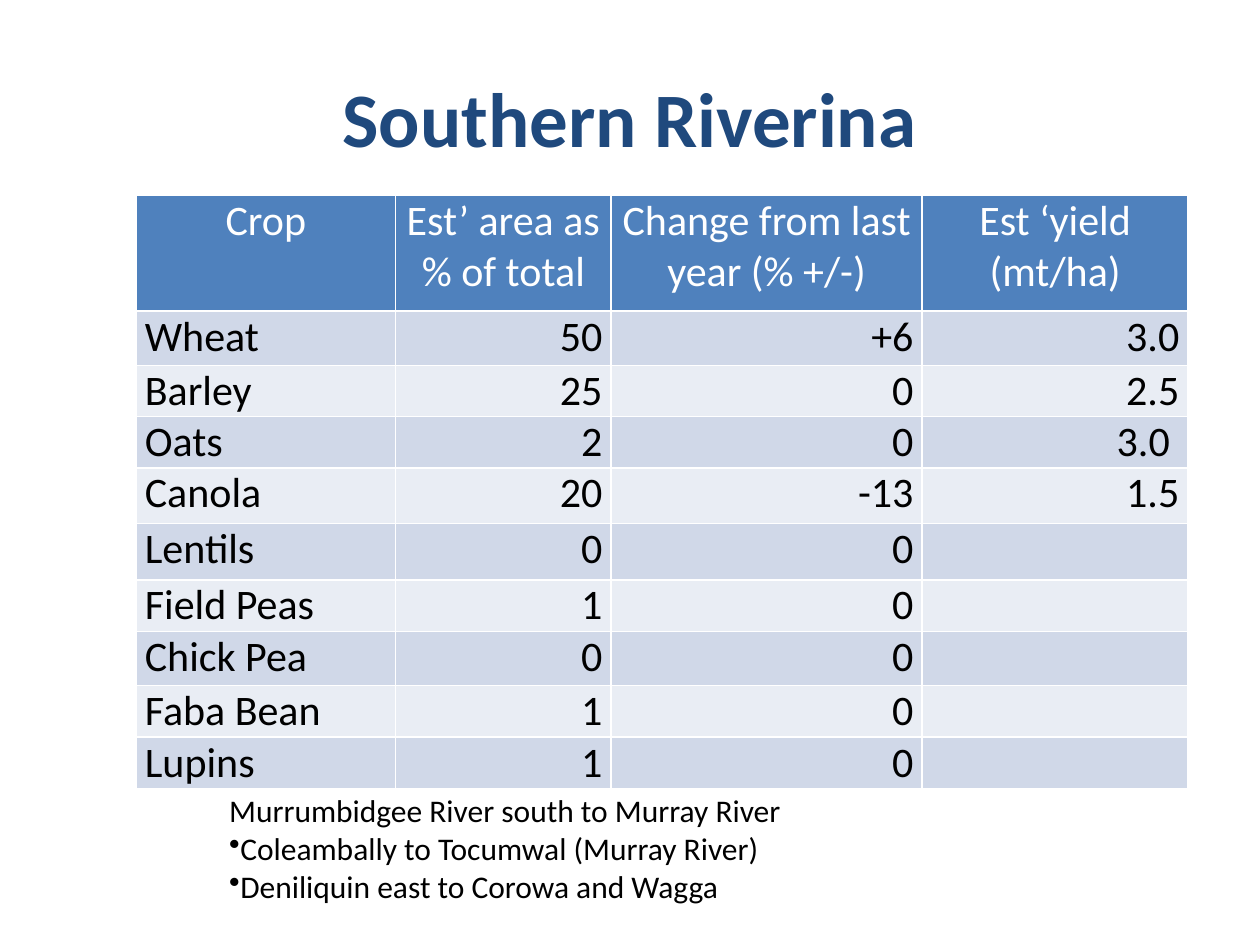
import pptx
import pptx.util
import pptx.dml.color
import pptx.enum.text
import pptx.oxml.ns
import lxml.etree
from pptx.util import Inches

ALIGN = pptx.enum.text.PP_ALIGN
ANCHOR = pptx.enum.text.MSO_ANCHOR


def rgb(value):
    return pptx.dml.color.RGBColor.from_string(value)


def write(p, text, size=24, color="000000", bold=False, align=ALIGN.LEFT,
          font="Calibri", bullet=None):
    """Put one formatted run into paragraph p."""
    p.alignment = align
    r = p.add_run()
    r.text = text
    r.font.name = font
    r.font.size = pptx.util.Pt(size)
    r.font.bold = bold
    r.font.color.rgb = rgb(color)
    if bullet:
        pPr = p._p.get_or_add_pPr()
        bu = lxml.etree.SubElement(pPr, pptx.oxml.ns.qn("a:buChar"))
        bu.set("char", bullet)


def write_lines(tf, lines, **fmt):
    for i, line in enumerate(lines):
        p = tf.paragraphs[0] if i == 0 else tf.add_paragraph()
        write(p, line, **fmt)


class SlideBuilder:
    title_color = "1F497D"
    header_fill = "4F81BD"
    band_fills = ("D0D8E8", "E9EDF4")

    def __init__(self, prs):
        self.s = prs.slides.add_slide(prs.slide_layouts[5])

    def title(self, text, box):
        sp = self.s.shapes.title
        sp.left, sp.top, sp.width, sp.height = map(Inches, box)
        tf = sp.text_frame
        tf.vertical_anchor = ANCHOR.MIDDLE
        write(tf.paragraphs[0], text, size=44, bold=True,
              color=self.title_color, align=ALIGN.CENTER)

    def table(self, rows, left, top, widths, heights):
        frame = self.s.shapes.add_table(
            len(rows), len(widths), Inches(left), Inches(top),
            Inches(sum(widths)), Inches(sum(heights)))
        table = frame.table
        for column, width in zip(table.columns, widths):
            column.width = Inches(width)
        for row, height in zip(table.rows, heights):
            row.height = Inches(height)
        for i, row in enumerate(rows):
            for j, text in enumerate(row):
                self.cell(table.cell(i, j), text, i, j)

    def cell(self, cell, text, i, j):
        cell.margin_left = cell.margin_right = Inches(0.07)
        cell.margin_top = cell.margin_bottom = 0
        cell.fill.solid()
        if i == 0:
            fill, color, align = self.header_fill, "FFFFFF", ALIGN.CENTER
        else:
            fill, color = self.band_fills[(i - 1) % 2], "000000"
            align = ALIGN.RIGHT if j else ALIGN.LEFT
        cell.fill.fore_color.rgb = rgb(fill)
        if text:
            write_lines(cell.text_frame, text.split("\n"), color=color, align=align)

    def region(self, heading, bullets, box):
        tf = self.s.shapes.add_textbox(*map(Inches, box)).text_frame
        tf.word_wrap = True
        write(tf.paragraphs[0], heading, size=18)
        for text in bullets:
            write(tf.add_paragraph(), text, size=18, bullet="•")


def main():
    prs = pptx.Presentation()
    prs.slide_width, prs.slide_height = Inches(10), Inches(7.5)
    slide = SlideBuilder(prs)

    # Title
    slide.title("Southern Riverina", (0.5, 0.3, 9, 1.25))

    # Crop estimates
    crops = [
        ("Crop", "Est’ area as % of total", "Change from last year (% +/-)",
         "Est ‘yield\n(mt/ha)"),
        ("Wheat", "50", "+6", "3.0"),
        ("Barley", "25", "0", "2.5"),
        ("Oats", "2", "0", "3.0 "),
        ("Canola", "20", "-13", "1.5"),
        ("Lentils", "0", "0", ""),
        ("Field Peas", "1", "0", ""),
        ("Chick Pea", "0", "0", ""),
        ("Faba Bean", "1", "0", ""),
        ("Lupins", "1", "0", ""),
    ]
    slide.table(crops, 1.08, 1.55, widths=(2.06, 1.71, 2.47, 2.11),
                heights=(0.92, 0.43, 0.37, 0.35, 0.44, 0.45, 0.39, 0.43, 0.41, 0.39))

    # Region covered
    slide.region("Murrumbidgee River south to Murray River",
                 ["Coleambally to Tocumwal (Murray River)",
                  "Deniliquin east to Corowa and Wagga"],
                 (1.72, 6.23, 6.88, 1.01))

    prs.save("out.pptx")


if __name__ == "__main__":
    main()
